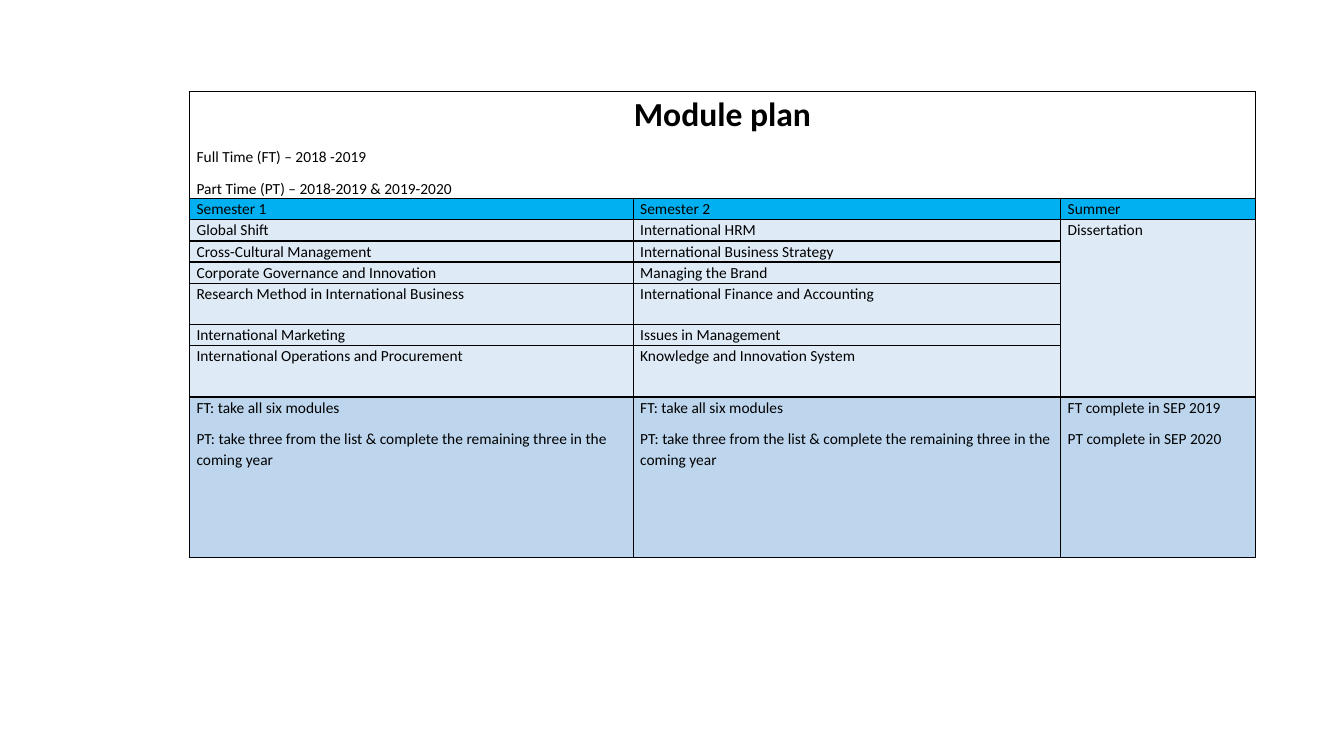
from lxml import etree
from pptx import Presentation
from pptx.dml.color import RGBColor
from pptx.enum.text import PP_ALIGN
from pptx.oxml.ns import qn
from pptx.util import Inches, Pt

LEFT, CENTER = PP_ALIGN.LEFT, PP_ALIGN.CENTER
BLACK, WHITE = "000000", "FFFFFF"
HEADER_BLUE, PALE_BLUE, MID_BLUE = "00B0F0", "DEEAF6", "BDD6EE"

# Content: each cell is a list of paragraphs
TITLE = "Module plan"
PERIODS = ["Full Time (FT) – 2018 -2019", "Part Time (PT) – 2018-2019 & 2019-2020"]
HEADINGS = ["Semester 1", "Semester 2", "Summer"]
MODULES = [
    ("Global Shift", "International HRM"),
    ("Cross-Cultural Management", "International Business Strategy"),
    ("Corporate Governance and Innovation", "Managing the Brand"),
    ("Research Method in International Business", "International Finance and Accounting"),
    ("International Marketing", "Issues in Management"),
    ("International Operations and Procurement", "Knowledge and Innovation System"),
]
SUMMER_MODULE = "Dissertation"
SEMESTER_RULES = [
    "FT: take all six modules",
    "PT: take three from the list & complete the remaining three in the coming year",
]
COMPLETION = ["FT complete in SEP 2019", "PT complete in SEP 2020"]

# Layout
LEFT_EDGE, TOP_EDGE = 1.88, 0.91
COLUMN_WIDTHS = [4.4, 4.24, 1.93]
ROW_HEIGHTS = [1.02, 0.21, 0.21, 0.21, 0.21, 0.41, 0.21, 0.51, 1.59]
HEADING_ROW, FIRST_MODULE_ROW = 1, 2
LAST_MODULE_ROW = FIRST_MODULE_ROW + len(MODULES) - 1
RULES_ROW = LAST_MODULE_ROW + 1


def color(value):
    return RGBColor.from_string(value)


def write(para, text, size=11, bold=False, align=LEFT):
    para.alignment = align
    para.line_spacing = 1.07
    para.space_after = Pt(8)
    span = para.add_run()
    span.text = text
    span.font.name = "Calibri"
    span.font.size = Pt(size)
    span.font.bold = bold
    span.font.color.rgb = color(BLACK)


def write_cell(cell, lines):
    for index, line in enumerate(lines):
        frame = cell.text_frame
        write(frame.add_paragraph() if index else frame.paragraphs[0], line)


def style_cell(cell, fill):
    cell.margin_left = cell.margin_right = Inches(0.07)
    cell.margin_top = cell.margin_bottom = 0
    properties = cell._tc.get_or_add_tcPr()
    for side in ("a:lnL", "a:lnR", "a:lnT", "a:lnB"):
        border = etree.SubElement(properties, qn(side), w=str(Pt(1)))
        solid = etree.SubElement(border, qn("a:solidFill"))
        etree.SubElement(solid, qn("a:srgbClr"), val=BLACK)
    cell.fill.solid()
    cell.fill.fore_color.rgb = color(fill)


deck = Presentation()
deck.slide_width, deck.slide_height = Inches(13.33), Inches(7.5)
page = deck.slides.add_slide(deck.slide_layouts[6])

# Table grid
plan = page.shapes.add_table(
    len(ROW_HEIGHTS), len(COLUMN_WIDTHS), Inches(LEFT_EDGE), Inches(TOP_EDGE),
    Inches(sum(COLUMN_WIDTHS)), Inches(sum(ROW_HEIGHTS))).table
for column, width in zip(plan.columns, COLUMN_WIDTHS):
    column.width = Inches(width)
for row, height in zip(plan.rows, ROW_HEIGHTS):
    row.height = Inches(height)

# Fills and borders
row_fills = [WHITE, HEADER_BLUE] + [PALE_BLUE] * len(MODULES) + [MID_BLUE]
for row, fill in zip(plan.rows, row_fills):
    for cell in row.cells:
        style_cell(cell, fill)

# Title row across all columns
title_cell = plan.cell(0, 0)
title_cell.merge(plan.cell(0, 2))
write(title_cell.text_frame.paragraphs[0], TITLE, size=24, bold=True, align=CENTER)
for period in PERIODS:
    write(title_cell.text_frame.add_paragraph(), period)

# Headings, modules and the summer dissertation
for column, heading in enumerate(HEADINGS):
    write_cell(plan.cell(HEADING_ROW, column), [heading])
for row, pair in enumerate(MODULES, FIRST_MODULE_ROW):
    for column, module in enumerate(pair):
        write_cell(plan.cell(row, column), [module])
summer_cell = plan.cell(FIRST_MODULE_ROW, 2)
summer_cell.merge(plan.cell(LAST_MODULE_ROW, 2))
write_cell(summer_cell, [SUMMER_MODULE])

# Study rules
for column, lines in enumerate([SEMESTER_RULES, SEMESTER_RULES, COMPLETION]):
    write_cell(plan.cell(RULES_ROW, column), lines)

deck.save("out.pptx")
